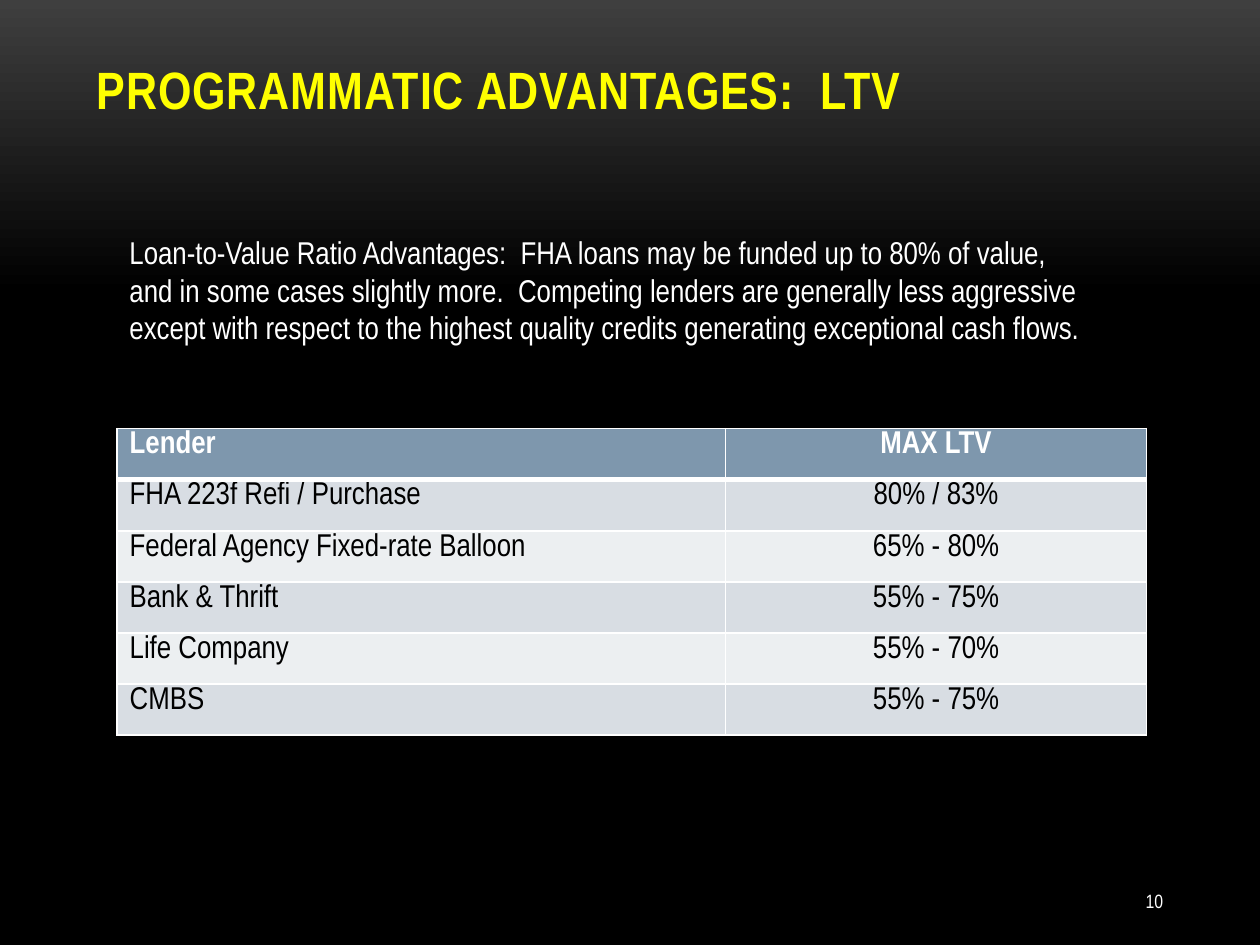
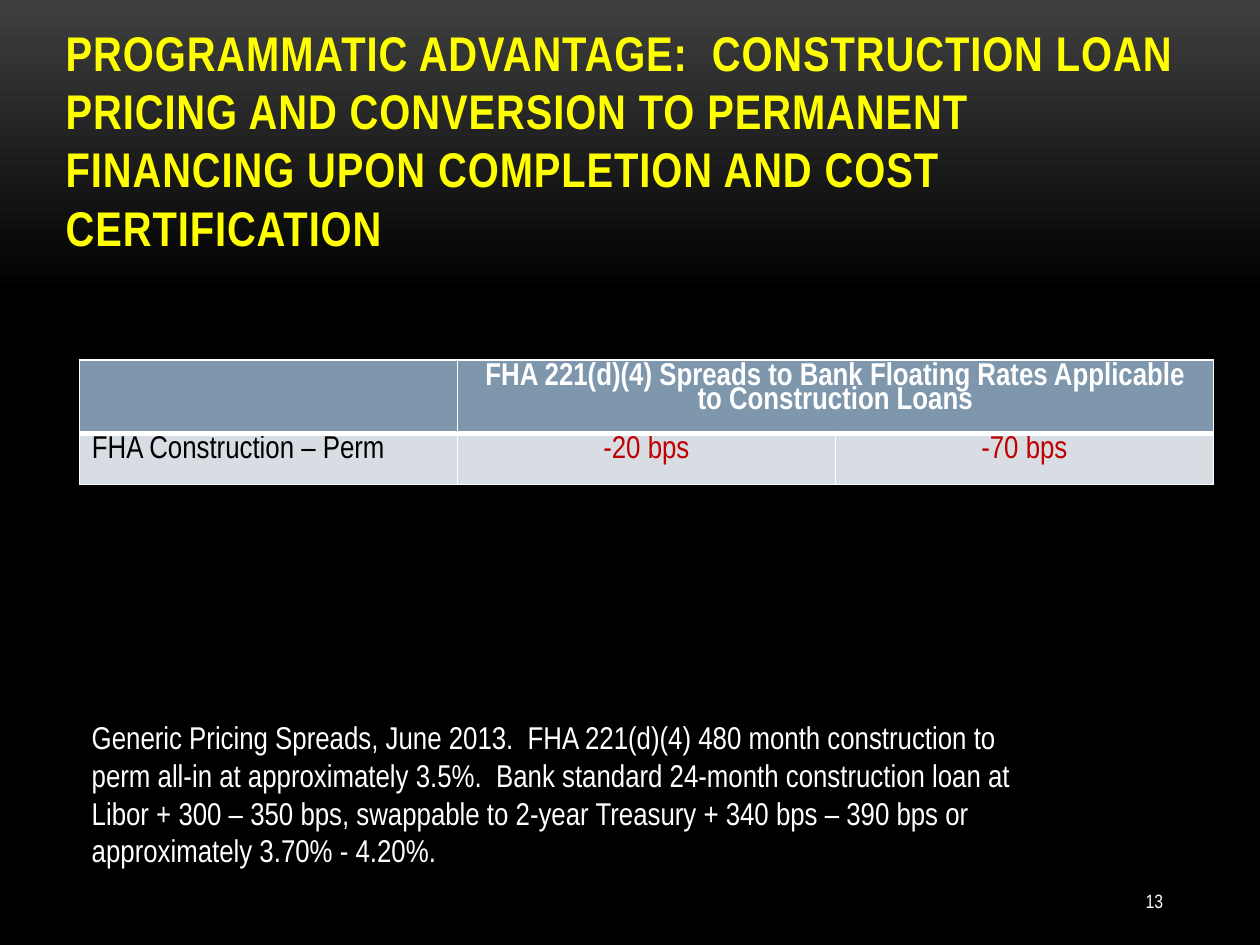
"""Build two slides on the programmatic advantages of FHA loans."""
from dataclasses import dataclass

from lxml import etree
from pptx import Presentation
from pptx import util as u
from pptx.dml.color import RGBColor
from pptx.enum import text as t
from pptx.oxml.ns import qn

FONT = "Arial Narrow"
YELLOW, WHITE, BLACK, RED = "FFFF00", "FFFFFF", "000000", "C00000"
GLOW, HEADER_FILL = "3F3F3F", "7E97AD"
BAND_FILLS = ("D8DDE3", "ECEFF1")
BODY_SIZE = 18
NOTE_WIDTH, NOTE_HEIGHT = 19.81, 3.33
ROW_HEIGHT = 1.03


@dataclass(frozen=True)
class Box:
    left: float
    top: float
    width: float
    height: float

    def lengths(self) -> tuple:
        return tuple(u.Cm(n) for n in (self.left, self.top, self.width, self.height))


@dataclass(frozen=True)
class RateTable:
    left: float
    top: float
    columns: tuple
    header_height: float
    rows: tuple
    value_color: str


@dataclass(frozen=True)
class Advantage:
    title: str
    title_box: Box
    title_size: float
    number: str
    rates: RateTable
    note: str
    note_left: float
    note_top: float


NUMBER_BOX = Box(20.96, 17.65, 2.74, 1.02)

ADVANTAGES = (
    Advantage(
        title="PROGRAMMATIC ADVANTAGES:  LTV",
        title_box=Box(1.7, 0.84, 22.02, 1.7),
        title_size=30,
        number="10",
        rates=RateTable(2.36, 8.64, (12.27, 8.48), ROW_HEIGHT, (
            ("Lender", "MAX LTV"),
            ("FHA 223f Refi / Purchase", "80% / 83%"),
            ("Federal Agency Fixed-rate Balloon", "65% - 80%"),
            ("Bank & Thrift", "55% - 75%"),
            ("Life Company", "55% - 70%"),
            ("CMBS", "55% - 75%"),
        ), BLACK),
        note="Loan-to-Value Ratio Advantages:  FHA loans may be funded up to 80% of value, "
             "and in some cases slightly more.  Competing lenders are generally less aggressive "
             "except with respect to the highest quality credits generating exceptional cash flows.",
        note_left=2.36,
        note_top=4.57,
    ),
    Advantage(
        title="PROGRAMMATIC ADVANTAGE:  CONSTRUCTION LOAN PRICING AND CONVERSION TO PERMANENT "
              "FINANCING UPON COMPLETION AND COST CERTIFICATION",
        title_box=Box(1.07, 3.94, 22.86, 1.35),
        title_size=27.8,
        number="13",
        rates=RateTable(1.6, 7.26, (7.62,) * 3, 1.44, (
            ("", "FHA 221(d)(4) Spreads to Bank Floating Rates Applicable to Construction Loans", None),
            ("FHA Construction – Perm", "-20 bps", "-70 bps"),
        ), RED),
        note="Generic Pricing Spreads, June 2013.  FHA 221(d)(4) 480 month construction to "
             "perm all-in at approximately 3.5%.  Bank standard 24-month construction loan at "
             "Libor + 300 – 350 bps, swappable to 2-year Treasury + 340 bps – 390 bps or "
             "approximately 3.70% - 4.20%.",
        note_left=1.6,
        note_top=14.35,
    ),
)


def rgb(color: str) -> RGBColor:
    return RGBColor.from_string(color)


def write(frame, wording: str, size: float, color: str, bold: bool = False,
          align=t.PP_ALIGN.LEFT):
    frame.word_wrap = True
    paragraph = frame.paragraphs[0]
    paragraph.text = wording
    paragraph.alignment = align
    font = paragraph.font
    font.name, font.size, font.bold = FONT, u.Pt(size), bold
    font.color.rgb = rgb(color)
    return paragraph


def paint_background(master) -> None:
    fill = master.background.fill
    fill.gradient()
    fill.gradient_angle = 270
    for stop, color, position in zip(fill.gradient_stops, (GLOW, BLACK), (0, 0.31)):
        stop.color.rgb = rgb(color)
        stop.position = position


def add_title(slide, advantage: Advantage) -> None:
    title = slide.shapes.title
    title.left, title.top, title.width, title.height = advantage.title_box.lengths()
    heading = write(title.text_frame, advantage.title, advantage.title_size, YELLOW, True)
    title.text_frame.auto_size = t.MSO_AUTO_SIZE.NONE
    title.text_frame.vertical_anchor = t.MSO_ANCHOR.BOTTOM
    heading.runs[0]._r.get_or_add_rPr().set("spc", "50")


def add_text(slide, box: Box, wording: str, size: float, align=t.PP_ALIGN.LEFT,
             anchor=t.MSO_ANCHOR.TOP) -> None:
    frame = slide.shapes.add_textbox(*box.lengths()).text_frame
    write(frame, wording, size, WHITE, align=align)
    frame.vertical_anchor = anchor


def draw_borders(cell, top: float, bottom: float) -> None:
    properties = cell._tc.get_or_add_tcPr()
    for side, width in (("L", 1), ("R", 1), ("T", top), ("B", bottom)):
        line = etree.SubElement(properties, qn(f"a:ln{side}"), w=str(u.Pt(width)))
        solid = etree.SubElement(line, qn("a:solidFill"))
        etree.SubElement(solid, qn("a:srgbClr"), val=WHITE)


def add_rates(slide, rates: RateTable) -> None:
    heights = (rates.header_height,) + (ROW_HEIGHT,) * (len(rates.rows) - 1)
    box = Box(rates.left, rates.top, sum(rates.columns), sum(heights))
    table = slide.shapes.add_table(len(heights), len(rates.columns), *box.lengths()).table
    for column, width in zip(table.columns, rates.columns):
        column.width = u.Cm(width)
    for r, (entries, height) in enumerate(zip(rates.rows, heights)):
        table.rows[r].height = u.Cm(height)
        is_header = r == 0
        for c, entry in enumerate(entries):
            cell = table.cell(r, c)
            draw_borders(cell, 3 if r == 1 else 1, 3 if is_header else 1)
            cell.fill.solid()
            cell.fill.fore_color.rgb = rgb(HEADER_FILL if is_header else BAND_FILLS[(r - 1) % 2])
            if entry is None:
                table.cell(r, c - 1).merge(cell)
                continue
            color = WHITE if is_header else rates.value_color if c else BLACK
            align = t.PP_ALIGN.CENTER if c else t.PP_ALIGN.LEFT
            write(cell.text_frame, entry, BODY_SIZE, color, is_header, align).line_spacing = 0.8


def add_advantage(prs, advantage: Advantage) -> None:
    slide = prs.slides.add_slide(prs.slide_layouts.get_by_name("Title Only"))
    add_title(slide, advantage)
    add_text(slide, NUMBER_BOX, advantage.number, 11, t.PP_ALIGN.RIGHT, t.MSO_ANCHOR.MIDDLE)
    add_rates(slide, advantage.rates)
    note_box = Box(advantage.note_left, advantage.note_top, NOTE_WIDTH, NOTE_HEIGHT)
    add_text(slide, note_box, advantage.note, BODY_SIZE)


def main() -> None:
    prs = Presentation()
    prs.slide_width, prs.slide_height = u.Cm(25.4), u.Cm(19.05)
    paint_background(prs.slide_master)
    for advantage in ADVANTAGES:
        add_advantage(prs, advantage)
    prs.save("out.pptx")


if __name__ == "__main__":
    main()
